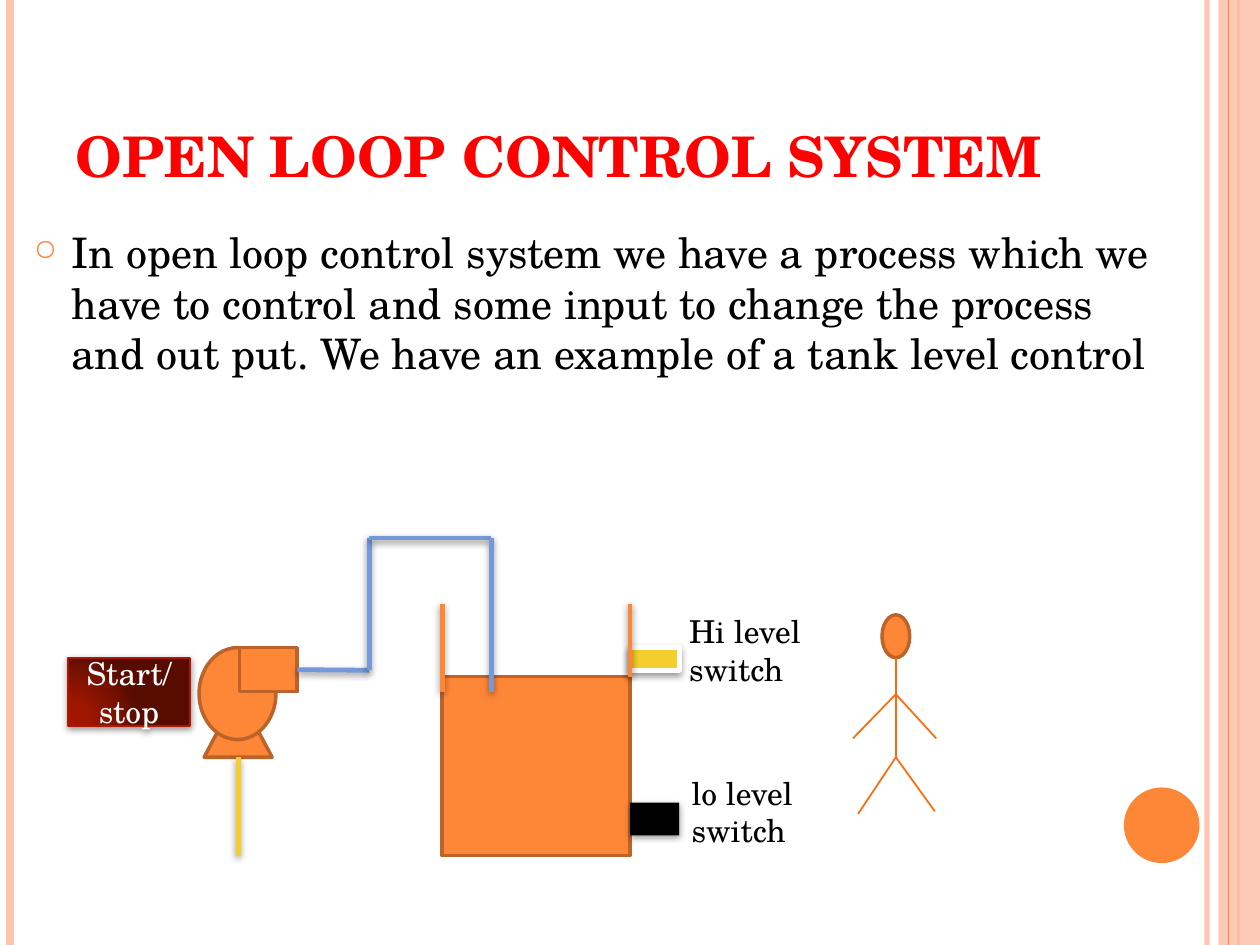
from lxml import etree
from pptx import Presentation
from pptx.dml.color import RGBColor
from pptx.enum.shapes import MSO_CONNECTOR, MSO_SHAPE
from pptx.enum.text import MSO_ANCHOR, PP_ALIGN
from pptx.oxml import parse_xml
from pptx.oxml.ns import qn
from pptx.util import Inches, Pt

RECT, OVAL, CONE = MSO_SHAPE.RECTANGLE, MSO_SHAPE.OVAL, MSO_SHAPE.ISOSCELES_TRIANGLE
LINE = MSO_CONNECTOR.STRAIGHT
TOP, MIDDLE, BOTTOM = MSO_ANCHOR.TOP, MSO_ANCHOR.MIDDLE, MSO_ANCHOR.BOTTOM
LEFT, CENTER = PP_ALIGN.LEFT, PP_ALIGN.CENTER

ORANGE = RGBColor(0xFE, 0x86, 0x37)
RUST = RGBColor(0xBC, 0x63, 0x29)
PEACH = RGBColor(0xFE, 0xC3, 0xAE)
BLUE = RGBColor(0x75, 0x98, 0xD9)
YELLOW = RGBColor(0xF5, 0xCD, 0x2D)
LIMB = RGBColor(0xFF, 0x6B, 0x0A)
CRIMSON = RGBColor(0xAC, 0x18, 0x00)
RED = RGBColor(0xFF, 0x00, 0x00)
BLACK = RGBColor(0, 0, 0)
WHITE = RGBColor(0xFF, 0xFF, 0xFF)
FONT = "TeX Gyre Schola"
NS = 'xmlns:a="http://schemas.openxmlformats.org/drawingml/2006/main"'

TITLE = "OPEN LOOP CONTROL SYSTEM"
BODY = ("In open loop control system we have a process which we have to control "
        "and some input to change the process and out put. "
        "We have an example of a tank level control")
LABELS = [("Hi level switch", (5.37, 4.81, 1.21, 0.71)),
          ("lo level switch", (5.39, 6.09, 1.21, 0.71))]

# x, colour, width, opacity of the full-height margin rules
RULES = [(9.58, PEACH, 3, 93), (0.08, PEACH, 4.5, 100), (9.83, ORANGE, 1.5, 100)]

EDGE = dict(fill=ORANGE, line=RUST, width=2)
PUMP = [(CONE, (1.62, 5.5, 0.54, 0.51)),
        (OVAL, (1.58, 5.14, 0.61, 0.73)),
        (RECT, (1.9, 5.14, 0.46, 0.35))]
TANK = (3.51, 5.37, 1.49, 1.42)
HEAD = (7, 4.88, 0.22, 0.34)
HIGH = (5, 5.14, 0.39, 0.18)
LOW = (5, 6.37, 0.39, 0.26)
BUTTON = (0.54, 5.22, 0.97, 0.54)
STOPS = [(0, "A41700"), (30, "9F1600"), (75, "771100"), (100, "580C00")]

PIPE = [(2.36, 5.32), (2.93, 5.32), (2.93, 4.27), (3.9, 4.27), (3.9, 5.49)]
WALLS = [((5, 4.79), (5, 5.37)), ((3.51, 4.79), (3.51, 5.49))]
SUCTION = ((1.89, 6.01), (1.89, 6.79))
NECK, HIP, CHEST = (7.11, 5.22), (7.11, 6.01), (7.11, 5.51)
LIMBS = [(NECK, HIP), (CHEST, (6.77, 5.86)), (CHEST, (7.43, 5.86)),
         (HIP, (6.81, 6.46)), (HIP, (7.42, 6.44))]

deck = Presentation()
deck.slide_width, deck.slide_height = Inches(10), Inches(7.5)
slide = deck.slides.add_slide(deck.slide_layouts[6])


def fade(item, alpha):
    """Set the opacity, in percent, of the first colour of an item."""
    tint = next(item._element.spPr.iter(qn("a:srgbClr")))
    etree.SubElement(tint, qn("a:alpha")).set("val", str(alpha * 1000))


def shade(item, alpha=42, dist=1.6):
    """Cast a soft shadow straight down."""
    props = item._element.spPr
    old = props.find(qn("a:effectLst"))
    if old is not None:
        props.remove(old)
    props.append(parse_xml(
        f'<a:effectLst {NS}><a:outerShdw blurRad="{Pt(4)}" dist="{Pt(dist)}" '
        f'dir="5400000" rotWithShape="0"><a:srgbClr val="000000">'
        f'<a:alpha val="{alpha * 1000}"/></a:srgbClr></a:outerShdw></a:effectLst>'))


def draw(kind, box, fill=None, line=None, width=1, into=slide.shapes):
    shape = into.add_shape(kind, *map(Inches, box))
    shape.shadow.inherit = False
    if fill is not None:
        shape.fill.solid()
        shape.fill.fore_color.rgb = fill
    if line is None:
        shape.line.fill.background()
    else:
        shape.line.color.rgb = line
        shape.line.width = Pt(width)
    return shape


def link(start, end, color, width, shadow=False):
    line = slide.shapes.add_connector(LINE, *map(Inches, (*start, *end)))
    line.line.color.rgb = color
    line.line.width = Pt(width)
    if shadow:
        shade(line)
    else:
        etree.SubElement(line._element.spPr, qn("a:effectLst"))
    return line


def write(shape, text, anchor=TOP, align=LEFT, **style):
    frame = shape.text_frame
    frame.word_wrap = True
    frame.vertical_anchor = anchor
    para = frame.paragraphs[0]
    para.alignment = align
    run = para.add_run()
    run.text = text
    look = dict(name=FONT, size=Pt(18)) | style
    color = look.pop("color", BLACK)
    for key, value in look.items():
        setattr(run.font, key, value)
    run.font.color.rgb = color
    return para


def textbox(box, text, **style):
    return write(slide.shapes.add_textbox(*map(Inches, box)), text, **style)


# Margin decoration
for x, color, width, alpha in RULES:
    rule = link((x, 0), (x, 7.5), color, width)
    if alpha < 100:
        fade(rule, alpha)
fade(draw(RECT, (9.67, 0, 0.33, 7.5), PEACH), 87)
link((9.75, 0), (9.75, 7.5), ORANGE, 0.75)
draw(OVAL, (8.92, 6.25, 0.6, 0.6), ORANGE)

# Title and body
textbox((0.5, 0.3, 8.17, 1.25), TITLE, anchor=BOTTOM, size=Pt(32), bold=True, color=RED)
para = textbox((0.17, 1.75, 9.25, 5.75), BODY, size=Pt(24))
para.space_before = Pt(6)
props = para._p.get_or_add_pPr()
props.set("marL", str(Inches(0.3)))
props.set("indent", str(Inches(-0.3)))
for bullet in ('buClr {}><a:srgbClr val="FE8637"/></a:buClr>',
               'buSzPct {} val="70000"/>', 'buChar {} char="○"/>'):
    props.append(parse_xml("<a:" + bullet.format(NS)))

# Tank, pump and pipe
draw(RECT, TANK, **EDGE)
group = slide.shapes.add_group_shape()
for kind, box in PUMP:
    motor = draw(kind, box, into=group.shapes, **EDGE)
pipe = [link(a, b, BLUE, 2.75, True) for a, b in zip(PIPE, PIPE[1:])]
pipe[0].begin_connect(motor, 3)

# Level switches and tank walls
shade(draw(RECT, HIGH, YELLOW, WHITE, 2.75), 40, 2)
shade(draw(RECT, LOW, BLACK))
for start, end in WALLS:
    link(start, end, ORANGE, 2.75, True)
for text, box in LABELS:
    textbox(box, text)

# Start/stop button
button = draw(RECT, BUTTON, line=CRIMSON)
stops = "".join(f'<a:gs pos="{pos * 1000}"><a:srgbClr val="{tint}"/></a:gs>'
                for pos, tint in STOPS)
button._element.spPr.insert(2, parse_xml(
    f'<a:gradFill {NS} rotWithShape="1"><a:gsLst>{stops}</a:gsLst><a:path path="circle">'
    '<a:fillToRect l="5000" t="100000" r="120000" b="10000"/></a:path></a:gradFill>'))
shade(button)
write(button, "Start/stop", MIDDLE, CENTER, color=WHITE)

# Operator and suction line
draw(OVAL, HEAD, **EDGE)
for start, end in LIMBS:
    link(start, end, LIMB, 1)
link(*SUCTION, YELLOW, 2.75, True)

deck.save("out.pptx")
